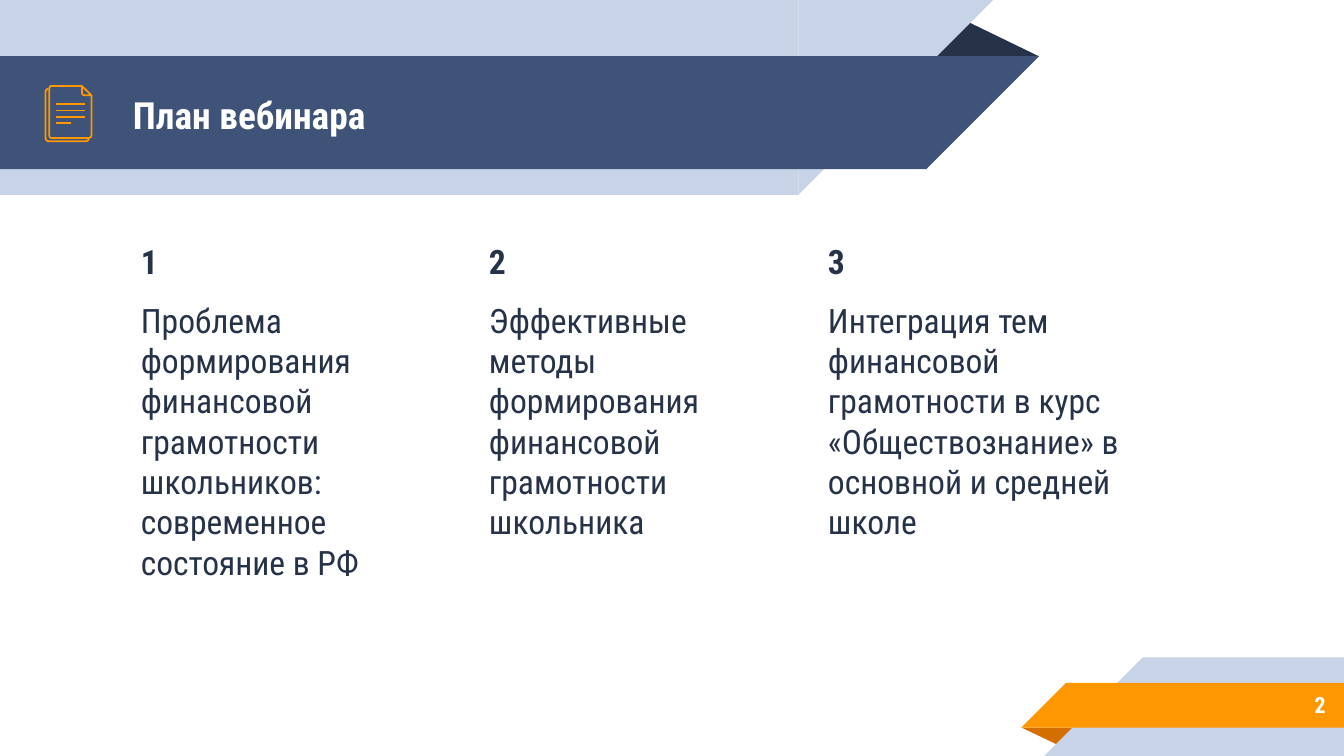
from pptx import Presentation
from pptx.dml.color import RGBColor
from pptx.enum.shapes import MSO_CONNECTOR as Connector, MSO_SHAPE as Shape
from pptx.enum.text import MSO_ANCHOR as Anchor, PP_ALIGN as Align
from pptx.oxml.ns import qn
from pptx.util import Pt
from lxml import etree

FONT = "Roboto Condensed"
NAVY, BLUE, PALE = "263248", "3F5378", "C7D3E6"
ORANGE, RUST, WHITE = "FF9800", "D26F00", "FFFFFF"


def color(value):
    return RGBColor.from_string(value)


def style_text(paragraph, size, font_color, bold):
    for run in paragraph.runs:
        run.font.name = FONT
        run.font.size = Pt(size)
        run.font.bold = bold
        run.font.color.rgb = color(font_color)


presentation = Presentation()
presentation.slide_width, presentation.slide_height = Pt(720), Pt(405)
slide = presentation.slides.add_slide(presentation.slide_layouts[5])
shapes = slide.shapes

# Ribbons, back to front: preset, left, top, width, height, rotation, fill
ribbons = [
    (Shape.ISOSCELES_TRIANGLE, 495.4, 10.1, 61.2, 20.1, 0, NAVY),
    (Shape.RECTANGLE, 0, 0, 427.7, 104.4, 0, PALE),
    (Shape.RIGHT_TRIANGLE, 427.7, 0, 104.4, 104.4, 90, PALE),
    (Shape.RECTANGLE, 0, 30.1, 496.2, 60.5, 0, BLUE),
    (Shape.RIGHT_TRIANGLE, 496.2, 30.1, 60.5, 60.5, 90, BLUE),
    (Shape.ISOSCELES_TRIANGLE, 547.3, 389.8, 31, 10, 180, RUST),
    (Shape.RECTANGLE, 612.2, 352.2, 107.8, 52.8, 0, PALE),
    (Shape.RIGHT_TRIANGLE, 559.4, 352.2, 52.8, 52.8, 270, PALE),
    (Shape.RECTANGLE, 571, 365.9, 149, 23.9, 0, ORANGE),
    (Shape.RIGHT_TRIANGLE, 547.1, 365.9, 23.9, 23.9, 270, ORANGE),
]
for preset, left, top, width, height, rotation, fill in ribbons:
    shape = shapes.add_shape(preset, Pt(left), Pt(top), Pt(width), Pt(height))
    shape.shadow.inherit = False
    shape.rotation = rotation
    shape.fill.solid()
    shape.fill.fore_color.rgb = color(fill)
    shape.line.fill.background()
    if preset == Shape.ISOSCELES_TRIANGLE:
        shape.adjustments[0] = 0.324

# Title, brought in front of the ribbons
title = shapes.title
title.element.getparent().append(title.element)
title.left, title.top, title.width, title.height = Pt(64), Pt(31), Pt(414), Pt(60.5)
title.text_frame.text = "План вебинара"
title.text_frame.vertical_anchor = Anchor.MIDDLE
title.text_frame.paragraphs[0].alignment = Align.LEFT
style_text(title.text_frame.paragraphs[0], 20, WHITE, True)

# Three numbered columns, then the slide number
columns = [
    (68.4, "Проблема формирования финансовой грамотности школьников: современное состояние в РФ"),
    (254.9, "Эффективные методы формирования финансовой грамотности школьника"),
    (436.5, "Интеграция тем финансовой грамотности в курс «Обществознание» в основной и средней школе"),
]
boxes = [(left, 121.7, 177.1, 213.1, [str(number), topic])
         for number, (left, topic) in enumerate(columns, 1)]
boxes.append((599.8, 365, 117.4, 25.2, ["2"]))
for left, top, width, height, lines in boxes:
    frame = shapes.add_textbox(Pt(left), Pt(top), Pt(width), Pt(height)).text_frame
    frame.word_wrap = True
    frame.margin_left = frame.margin_right = Pt(7.2)
    frame.margin_top = frame.margin_bottom = Pt(7.2)
    frame.text = "\n".join(lines)
    heading = frame.paragraphs[0]
    if len(lines) == 1:
        frame.vertical_anchor = Anchor.MIDDLE
        heading.alignment = Align.RIGHT
        style_text(heading, 12, WHITE, True)
    else:
        heading.space_before = Pt(6)
        style_text(heading, 18, NAVY, True)
        frame.paragraphs[1].space_before = Pt(10)
        style_text(frame.paragraphs[1], 18, NAVY, False)

# Document icon: back page, front page, folded corner
outlines = [
    ([(47.5, 74.2), (47.3, 75.1), (46.1, 75.7), (25.9, 75.7), (24.9, 75.2),
      (24.4, 74.2), (24.4, 49), (24.9, 48), (25.9, 47.5)], False),
    ([(49, 51.1), (49, 72.7), (48.6, 73.6), (47.5, 74), (27.4, 74), (26.7, 73.6),
      (26.4, 72.7), (26.4, 47.5), (26.7, 46.5), (27.4, 46.1), (43.9, 46.1)], False),
    ([(43.9, 46.1), (49, 51.1), (45.4, 51.1), (44.3, 50.8), (43.9, 50)], True),
]
icon_parts = []
for points, closed in outlines:
    start, *others = [(Pt(x), Pt(y)) for x, y in points]
    builder = shapes.build_freeform(*start)
    builder.add_line_segments(others, close=closed)
    outline = builder.convert_to_shape()
    outline.shadow.inherit = False
    outline.fill.background()
    icon_parts.append(outline)

# Text lines inside the icon
for row, right in enumerate([45.6, 45.6, 45.6, 38.2]):
    y = Pt(55.9 + 3.3 * row)
    text_line = shapes.add_connector(Connector.STRAIGHT, Pt(right), y, Pt(30), y)
    etree.SubElement(text_line.element.spPr, qn("a:effectLst"))
    icon_parts.append(text_line)
for part in icon_parts:
    part.line.color.rgb = color(ORANGE)
    part.line.width = Pt(0.96)

presentation.save("out.pptx")
